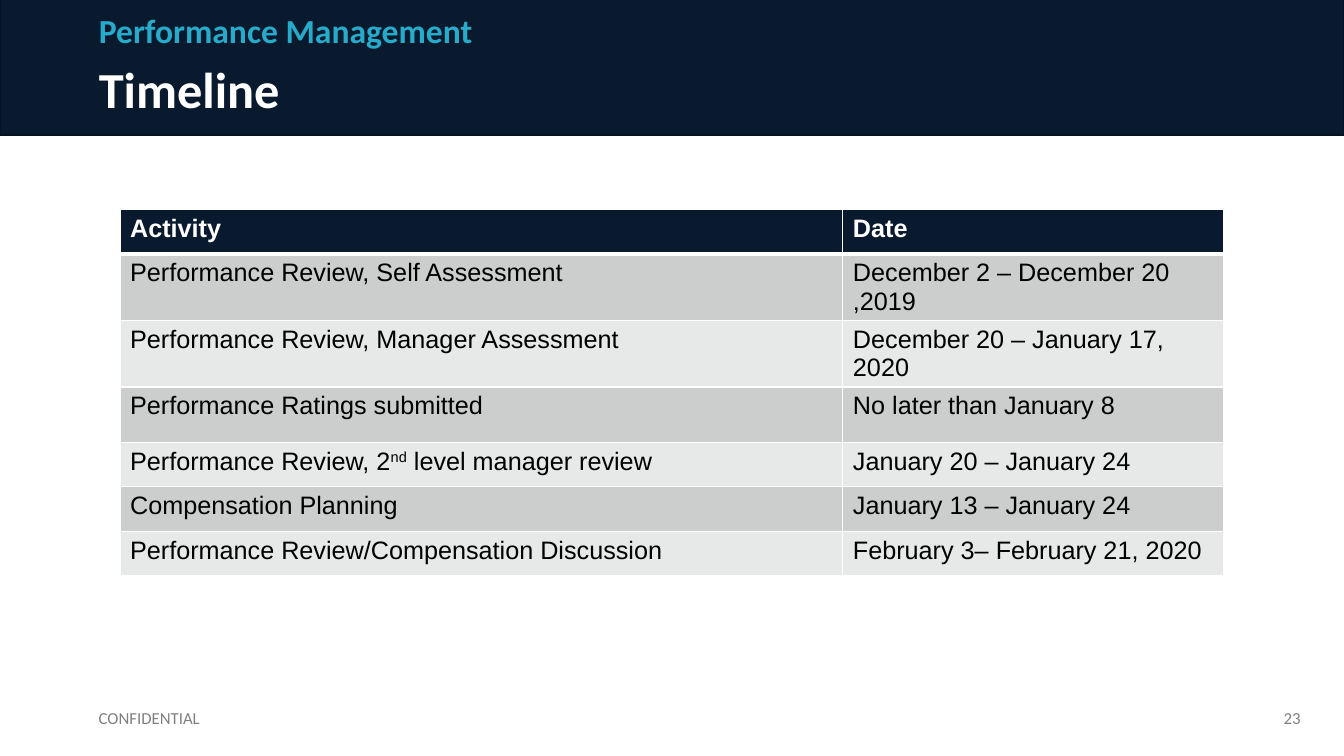
from pptx import Presentation
from pptx.dml.color import RGBColor
from pptx.enum.shapes import MSO_SHAPE as SHAPE
from pptx.enum.text import MSO_ANCHOR as ANCHOR, MSO_AUTO_SIZE as AUTO, PP_ALIGN as ALIGN
from pptx.oxml.ns import qn
from pptx.util import Emu, Pt
from lxml.etree import SubElement

PX = 9144  # 100 px to the inch
NAVY = RGBColor(0x09, 0x1A, 0x2F)
NAVY_LINE = RGBColor(0x07, 0x13, 0x23)
TEAL = RGBColor(0x27, 0xAB, 0xCB)
GREY = RGBColor(0x80, 0x80, 0x80)
WHITE = RGBColor(0xFF, 0xFF, 0xFF)
BLACK = RGBColor(0, 0, 0)
ROW_FILLS = RGBColor(0xE7, 0xE8, 0xE8), RGBColor(0xCC, 0xCD, 0xCD)

# ^ marks the start and end of a superscript
TIMELINE = [
    ("Activity", "Date"),
    ("Performance Review, Self Assessment", "December 2 – December 20 ,2019"),
    ("Performance Review, Manager Assessment", "December 20 – January 17, 2020"),
    ("Performance Ratings submitted", "No later than January 8"),
    ("Performance Review, 2^nd^ level manager review", "January 20 – January 24"),
    ("Compensation Planning", "January 13 – January 24"),
    ("Performance Review/Compensation Discussion", "February 3– February 21, 2020"),
]
COL_WIDTHS = 717, 378
ROW_HEIGHTS = 44, 45, 48, 55, 44, 44, 44


def px(*lengths):
    return [Emu(n * PX) for n in lengths]


def format_run(r, size, color, bold=False, name="Calibri"):
    r.font.size = Pt(size)
    r.font.name = name
    r.font.bold = bold
    r.font.color.rgb = color


def set_text(sp, text, size, color, anchor, bold=False, align=ALIGN.LEFT):
    tf = sp.text_frame
    tf.text = text
    tf.word_wrap = True
    tf.auto_size = AUTO.NONE
    tf.vertical_anchor = anchor
    p = tf.paragraphs[0]
    p.alignment = align
    format_run(p.runs[0], size, color, bold)
    return p


def fill_placeholder(sp, box, text, size, color, anchor, spacing):
    sp.left, sp.top, sp.width, sp.height = px(*box)
    p = set_text(sp, text, size, color, anchor, bold=True)
    p.line_spacing = spacing
    p.space_before = Pt(0)
    pPr = p._p.get_or_add_pPr()
    pPr.set("marL", "0")
    pPr.set("indent", "0")
    SubElement(pPr, qn("a:buNone"))


def add_band(slide):
    sp = slide.shapes.add_shape(SHAPE.RECTANGLE, *px(0, -1, 1333, 135))
    sp.shadow.inherit = False
    sp.fill.solid()
    sp.fill.fore_color.rgb = NAVY
    sp.line.color.rgb = NAVY_LINE
    sp.line.width = Pt(1)
    slide.shapes._spTree.insert(2, sp._element)  # behind the title


def add_footer(slide, left, width, text, align):
    sp = slide.shapes.add_textbox(*px(left, 692, width, 40))
    set_text(sp, text, 12, GREY, ANCHOR.MIDDLE, align=align)


def set_borders(cell, **widths):
    tcPr = cell._tc.get_or_add_tcPr()
    for side in "LRTB":
        ln = SubElement(tcPr, qn("a:ln" + side), w=str(Pt(widths.get(side, 1))))
        fill = SubElement(ln, qn("a:solidFill"))
        SubElement(fill, qn("a:srgbClr"), val=str(WHITE))


def fill_cell(cell, text, row):
    header = row == 0
    set_borders(cell, B=3 if header else 1, T=3 if row == 1 else 1)
    cell.fill.solid()
    cell.fill.fore_color.rgb = NAVY if header else ROW_FILLS[row % 2]
    p = cell.text_frame.paragraphs[0]
    for i, part in enumerate(text.split("^")):
        r = p.add_run()
        r.text = part
        format_run(r, 18, WHITE if header else BLACK, header, "Arial")
        if i % 2:
            r.font._element.set("baseline", "30000")


def add_timeline(slide):
    box = px(119, 208, sum(COL_WIDTHS), sum(ROW_HEIGHTS))
    table = slide.shapes.add_table(len(TIMELINE), len(COL_WIDTHS), *box).table
    for col, width in zip(table.columns, px(*COL_WIDTHS)):
        col.width = width
    for row, height in zip(table.rows, px(*ROW_HEIGHTS)):
        row.height = height
    for i, texts in enumerate(TIMELINE):
        for j, text in enumerate(texts):
            fill_cell(table.cell(i, j), text, i)


def main():
    prs = Presentation()
    prs.slide_width, prs.slide_height = px(1333, 750)
    slide = prs.slides.add_slide(prs.slide_layouts[1])

    # Header
    add_band(slide)
    title, section = slide.placeholders
    fill_placeholder(title, (88, 53, 1212, 80), "Timeline", 36, WHITE, ANCHOR.MIDDLE, 0.8)
    fill_placeholder(section, (88, 7, 1212, 48), "Performance Management", 24, TEAL,
                     ANCHOR.BOTTOM, 0.9)

    # Schedule
    add_timeline(slide)

    # Footer
    add_footer(slide, 1000, 300, "23", ALIGN.RIGHT)
    add_footer(slide, 88, 450, "CONFIDENTIAL", ALIGN.LEFT)

    prs.save("out.pptx")


if __name__ == "__main__":
    main()
